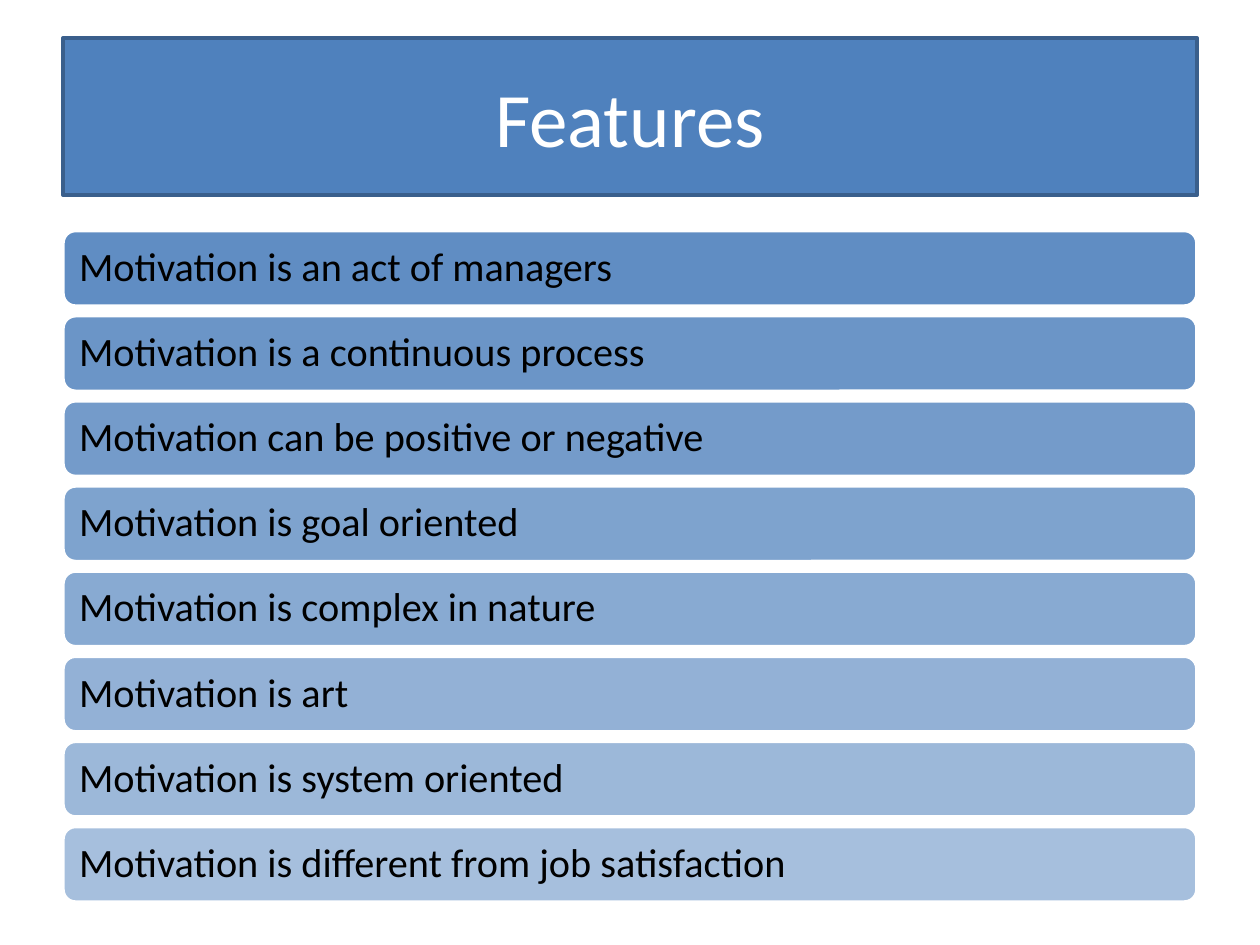
from lxml.etree import SubElement
from pptx import Presentation
from pptx.dml.color import RGBColor
from pptx.enum.shapes import MSO_SHAPE
from pptx.enum.text import MSO_ANCHOR, PP_ALIGN
from pptx.oxml.ns import qn
from pptx.util import Inches, Pt

ROUND = MSO_SHAPE.ROUNDED_RECTANGLE
MIDDLE = MSO_ANCHOR.MIDDLE
CENTER, JUSTIFY = PP_ALIGN.CENTER, PP_ALIGN.JUSTIFY

HUES = {"blue": "4F81BD", "navy": "3A5F8C", "white": "FFFFFF", "black": "000000"}
POINTS = [
    "Motivation is an act of managers",
    "Motivation is a continuous process",
    "Motivation can be positive or negative",
    "Motivation is goal oriented",
    "Motivation is complex in nature",
    "Motivation is art",
    "Motivation is system oriented",
    "Motivation is different from job satisfaction",
]
LEFT, WIDTH = 0.5, 9
TOP, HIGH, LAST = 1.83, 0.6, 6.56
DENSE, FAINT = 90, 50


class Deck:
    """Hold the style and the current slide, and draw each kind of element."""

    def __init__(self):
        self.show = Presentation()
        self.show.slide_width, self.show.slide_height = Inches(10), Inches(7.5)
        self.slide = self.show.slides.add_slide(self.show.slide_layouts[5])

    def hue(self, name):
        return RGBColor.from_string(HUES[name])

    def apply(self, item, style):
        for name, value in style.items():
            setattr(item, name, value)

    def paint(self, shape, edge):
        shape.fill.solid()
        shape.fill.fore_color.rgb = self.hue("blue")
        shape.line.color.rgb = self.hue(edge)
        shape.line.width = Pt(2)

    def label(self, shape, text, size, color, para):
        frame = shape.text_frame
        frame.text = text
        inset = Inches(0.1)
        self.apply(frame, {
            "vertical_anchor": MIDDLE, "word_wrap": True,
            "margin_left": inset, "margin_right": inset,
            "margin_top": inset, "margin_bottom": inset,
        })
        line = frame.paragraphs[0]
        self.apply(line, para)
        font = line.runs[0].font
        self.apply(font, {"name": "Calibri", "size": Pt(size)})
        font.color.rgb = self.hue(color)

    def title(self, text):
        shape = self.slide.shapes.title
        self.apply(shape, {
            "left": Inches(LEFT), "top": Inches(0.3),
            "width": Inches(WIDTH), "height": Inches(1.25),
        })
        self.paint(shape, "navy")
        self.label(shape, text, 44, "white", {"alignment": CENTER})

    def bar(self, text, top, alpha):
        shape = self.slide.shapes.add_shape(
            ROUND, Inches(LEFT), Inches(top), Inches(WIDTH), Inches(HIGH))
        shape.shadow.inherit = False
        self.paint(shape, "white")
        color = shape.element.xpath("./p:spPr/a:solidFill/a:srgbClr")[0]
        SubElement(color, qn("a:alpha"), val=str(round(alpha * 1000)))
        self.label(shape, text, 23, "black",
                   {"alignment": JUSTIFY, "line_spacing": 0.9})


def main():
    deck = Deck()
    deck.title("Features")
    gaps = len(POINTS) - 1
    for i, text in enumerate(POINTS):
        part = i / gaps
        deck.bar(text, TOP + (LAST - TOP) * part, DENSE + (FAINT - DENSE) * part)
    deck.show.save("out.pptx")


if __name__ == "__main__":
    main()
